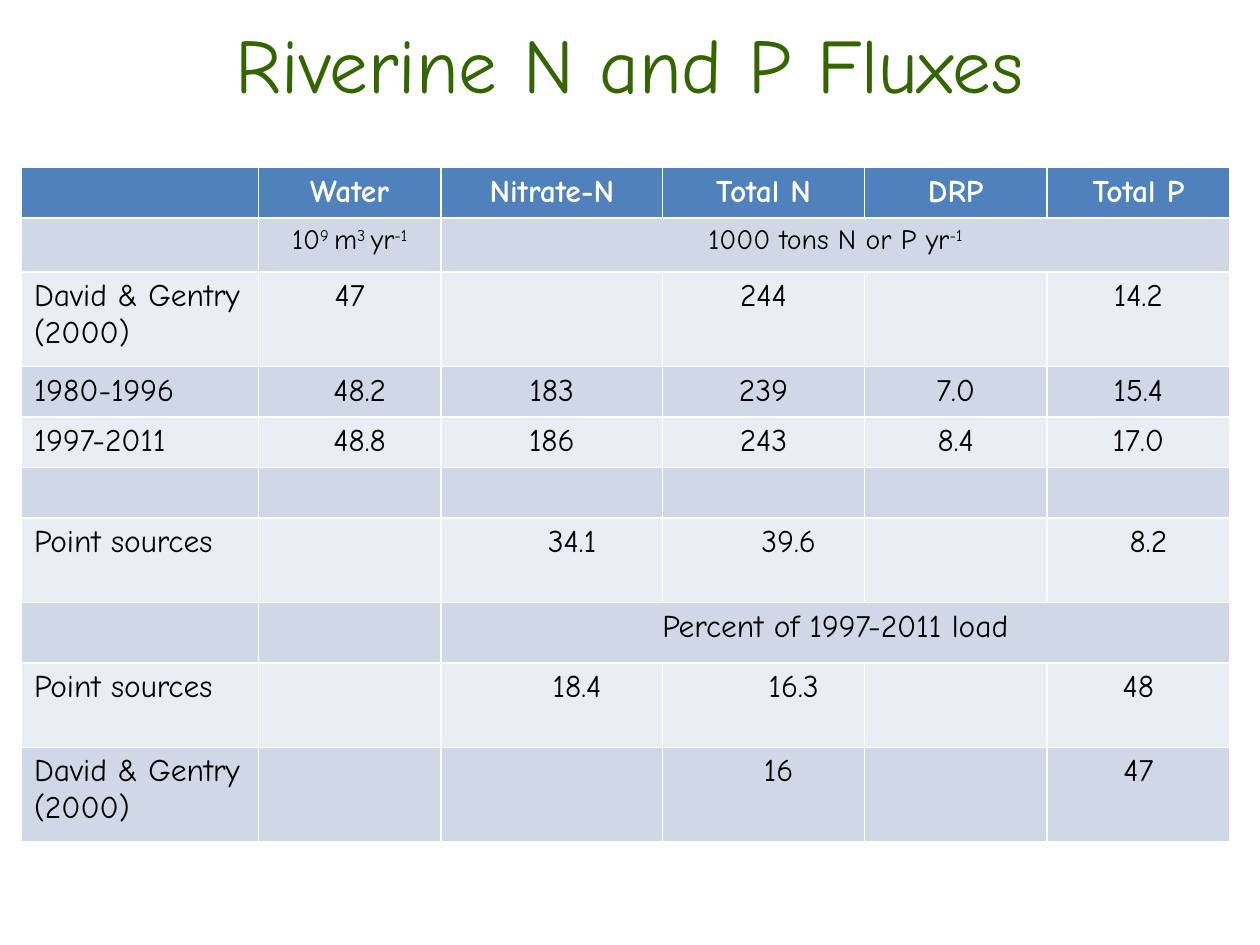
"""Build the slide on riverine N and P fluxes."""
import pptx
import pptx.dml.color
import pptx.enum.text
import pptx.util

FONT = "Comic Neue"
CENTER = pptx.enum.text.PP_ALIGN.CENTER
LEFT = pptx.enum.text.PP_ALIGN.LEFT
inch = pptx.util.Inches


def rgb(color):
    return pptx.dml.color.RGBColor.from_string(color)


def write(tf, text, size, color, align, bold=False):
    p = tf.paragraphs[0]
    p.alignment = align
    p.font.name = FONT
    p.font.size = pptx.util.Pt(size)
    p.font.bold = bold
    p.font.color.rgb = rgb(color)
    for i, part in enumerate(text.split("^") if text else []):
        r = p.add_run()
        r.text = part
        if i % 2:
            r._r.get_or_add_rPr().set("baseline", "30000")


prs = pptx.Presentation()
prs.slide_width, prs.slide_height = inch(10), inch(7.5)
s = prs.slides.add_slide(prs.slide_layouts[6])

tf = s.shapes.add_textbox(inch(0.5), inch(0.08), inch(9), inch(0.83)).text_frame
tf.word_wrap = True
tf.vertical_anchor = pptx.enum.text.MSO_ANCHOR.MIDDLE
write(tf, "Riverine N and P Fluxes", 44, "336600", CENTER)

col_widths = [1.88, 1.45, 1.76, 1.6, 1.45, 1.45]
row_heights = [0.38, 0.43, 0.75, 0.39, 0.39, 0.39, 0.67, 0.48, 0.67, 0.75]
rows = [
    ["", "Water", "Nitrate-N", "Total N", "DRP", "Total P"],
    ["", "10^9 ^m^3 ^yr^-1", "1000 tons N or P yr^-1", "", "", ""],
    ["David & Gentry (2000)", "47", "", "244", "", "14.2"],
    ["1980-1996", "48.2", "183", "239", "7.0", "15.4"],
    ["1997-2011", "48.8", "186", "243", "8.4", "17.0"],
    [""] * 6,
    ["Point sources", "", "34.1", "39.6", "", "8.2"],
    ["", "", "Percent of 1997-2011 load", "", "", ""],
    ["Point sources", "", "18.4", "16.3", "", "48"],
    ["David & Gentry (2000)", "", "", "16", "", "47"],
]
indents = {
    (3, 1): 0.16, (4, 1): 0.16, (6, 2): 0.32, (6, 3): 0.4,
    (6, 5): 0.16, (8, 2): 0.4, (8, 3): 0.48, (9, 3): 0.24,
}

table = s.shapes.add_table(
    len(rows), len(col_widths), inch(0.17), inch(1.33),
    inch(sum(col_widths)), inch(sum(row_heights))).table
for col, width in zip(table.columns, col_widths):
    col.width = inch(width)
for row, height in zip(table.rows, row_heights):
    row.height = inch(height)
for i in (1, 7):
    table.cell(i, 2).merge(table.cell(i, 5))

for i, row in enumerate(rows):
    header = i == 0
    fill = "4F81BD" if header else ("E9EDF4", "D0D8E8")[i % 2]
    for j, text in enumerate(row):
        cell = table.cell(i, j)
        cell.fill.solid()
        cell.fill.fore_color.rgb = rgb(fill)
        cell.margin_left = inch(0.1 + indents.get((i, j), 0))
        write(cell.text_frame, text, 16 if i == 1 else 18,
              "FFFFFF" if header else "000000", CENTER if j else LEFT, header)

prs.save("out.pptx")
